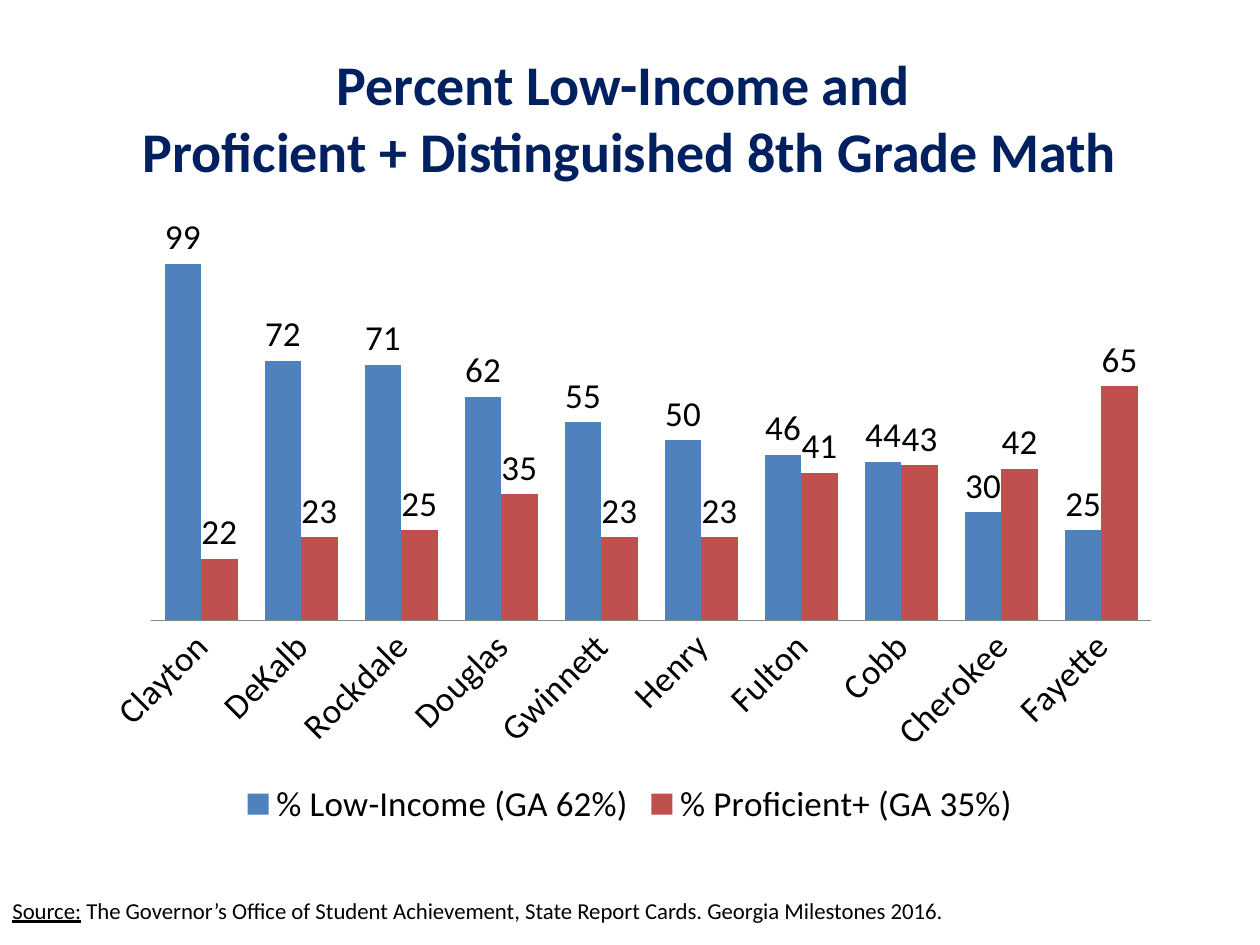
"""Build a slide comparing low-income share and 8th grade math proficiency by county."""
from pptx import Presentation
from pptx.chart.data import CategoryChartData
from pptx.dml.color import RGBColor
from pptx.enum.chart import XL_CHART_TYPE, XL_LABEL_POSITION, XL_LEGEND_POSITION, XL_TICK_MARK
from pptx.enum.text import MSO_ANCHOR, PP_ALIGN
from pptx.util import Cm, Pt

COLUMNS = XL_CHART_TYPE.COLUMN_CLUSTERED
OUTSIDE_END = XL_LABEL_POSITION.OUTSIDE_END
LEGEND_BOTTOM = XL_LEGEND_POSITION.BOTTOM
NO_TICK = XL_TICK_MARK.NONE
MIDDLE = MSO_ANCHOR.MIDDLE
LEFT, CENTER = PP_ALIGN.LEFT, PP_ALIGN.CENTER

FONT = "Calibri"
COLORS = {"title": "002060", "text": "000000", "axis": "868686",
          "low_income": "4F81BD", "proficient": "C0504D"}

TITLE = "Percent Low-Income and \vProficient + Distinguished 8th Grade Math"
SOURCE_RUNS = [
    ("Source:", True),
    (" The Governor’s Office of Student Achievement, State Report Cards. "
     "Georgia Milestones 2016.", False),
]
COUNTIES = ["Clayton", "DeKalb", "Rockdale", "Douglas", "Gwinnett",
            "Henry", "Fulton", "Cobb", "Cherokee", "Fayette"]
SERIES = [
    ("% Low-Income (GA 62%)", "low_income", [99, 72, 71, 62, 55, 50, 46, 44, 30, 25], {}),
    ("% Proficient+ (GA 35%)", "proficient", [17, 23, 25, 35, 23, 23, 41, 43, 42, 65], {0: "22"}),
]
BOXES = {"title": (1.27, 0.76, 22.86, 3.18),
         "source": (0, 18.14, 22.23, 0.58),
         "chart": (1.75, 3.53, 21.9, 13.26)}


def color(name):
    return RGBColor.from_string(COLORS[name])


def place(name):
    return [Cm(length) for length in BOXES[name]]


def style_font(font, size, color_name="text", bold=False):
    font.name = FONT
    font.size = Pt(size)
    font.bold = bold
    font.color.rgb = color(color_name)


def add_text_box(slide, name, alignment):
    text_frame = slide.shapes.add_textbox(*place(name)).text_frame
    text_frame.word_wrap = True
    text_frame.paragraphs[0].alignment = alignment
    return text_frame


def add_title(slide):
    text_frame = add_text_box(slide, "title", CENTER)
    text_frame.vertical_anchor = MIDDLE
    paragraph = text_frame.paragraphs[0]
    paragraph.text = TITLE
    for run in paragraph.runs:
        style_font(run.font, 32, "title", bold=True)


def add_source(slide):
    paragraph = add_text_box(slide, "source", LEFT).paragraphs[0]
    paragraph.line_spacing = 0.6
    for text, underlined in SOURCE_RUNS:
        run = paragraph.add_run()
        run.text = text
        style_font(run.font, 13)
        run.font.underline = underlined


def style_axes(chart):
    value_axis = chart.value_axis
    value_axis.visible = False
    value_axis.has_major_gridlines = False
    value_axis.minimum_scale, value_axis.maximum_scale = 0, 120
    category_axis = chart.category_axis
    category_axis.major_tick_mark = NO_TICK
    category_axis.format.line.color.rgb = color("axis")
    category_axis.format.line.width = Pt(0.75)
    style_font(category_axis.tick_labels.font, 20)
    category_axis._element.txPr.bodyPr.set("rot", "-2700000")


def style_series(series, color_name, custom_labels):
    series.format.fill.solid()
    series.format.fill.fore_color.rgb = color(color_name)
    series.invert_if_negative = False
    labels = series.data_labels
    labels.show_value = True
    labels.number_format = "0"
    labels.number_format_is_linked = False
    labels.position = OUTSIDE_END
    style_font(labels.font, 20)
    for index, text in custom_labels.items():
        label = series.points[index].data_label
        label.text_frame.text = text
        style_font(label.text_frame.paragraphs[0].runs[0].font, 20)
        label.position = OUTSIDE_END


def add_county_chart(slide):
    chart_data = CategoryChartData(number_format="0")
    chart_data.categories = COUNTIES
    for name, _, values, _ in SERIES:
        chart_data.add_series(name, values)
    chart = slide.shapes.add_chart(COLUMNS, *place("chart"), chart_data).chart
    style_font(chart.font, 20)
    chart.has_title = False
    chart.has_legend = True
    chart.legend.position = LEGEND_BOTTOM
    chart.legend.include_in_layout = False
    style_axes(chart)
    plot = chart.plots[0]
    plot.gap_width = 75
    plot.overlap = 0
    plot.vary_by_categories = False
    for series, (_, color_name, _, custom_labels) in zip(plot.series, SERIES):
        style_series(series, color_name, custom_labels)


def main():
    presentation = Presentation()
    presentation.slide_width, presentation.slide_height = Cm(25.4), Cm(19.05)
    slide = presentation.slides.add_slide(presentation.slide_layouts[6])
    add_title(slide)
    add_source(slide)
    add_county_chart(slide)
    presentation.save("out.pptx")


if __name__ == "__main__":
    main()
